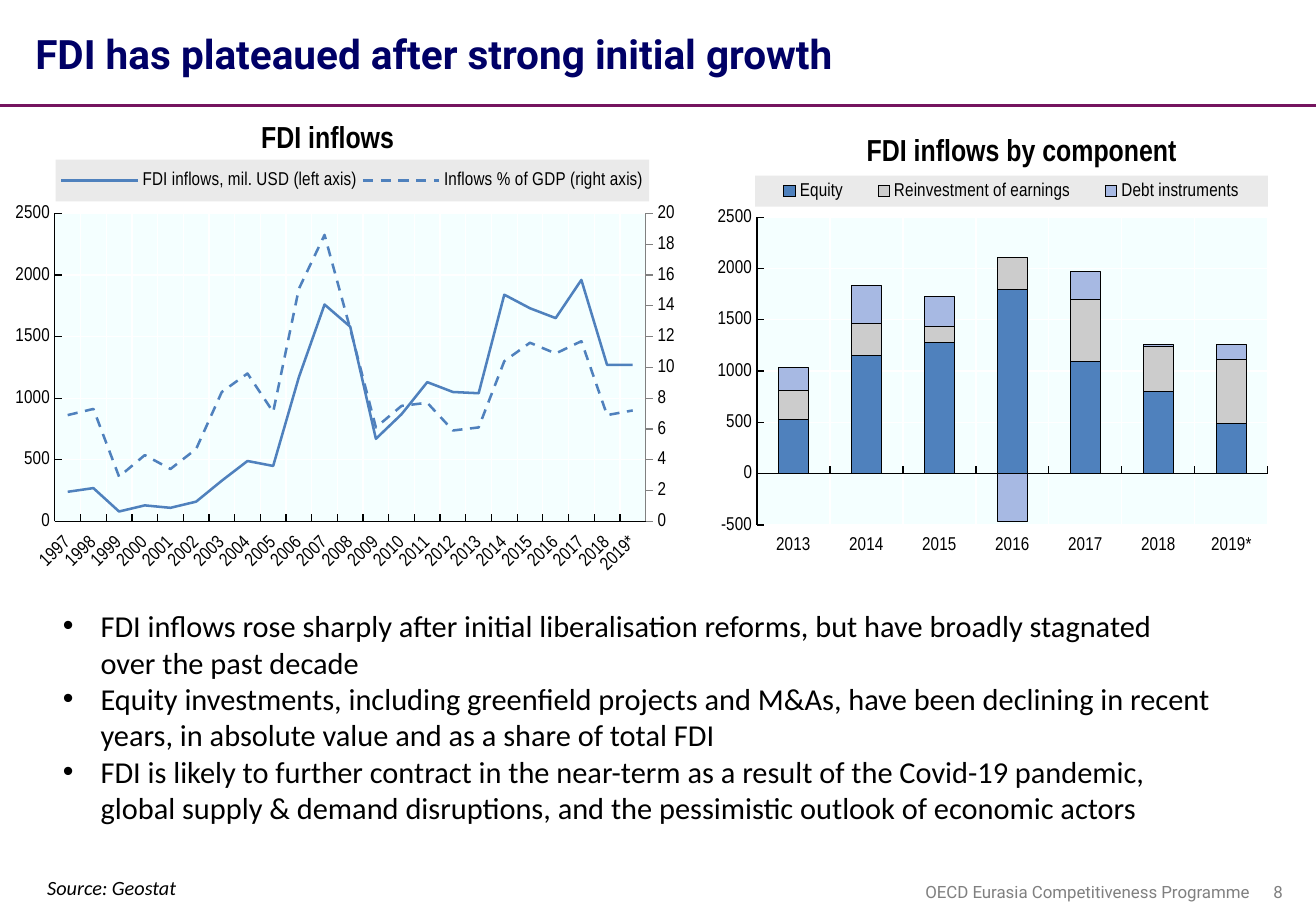
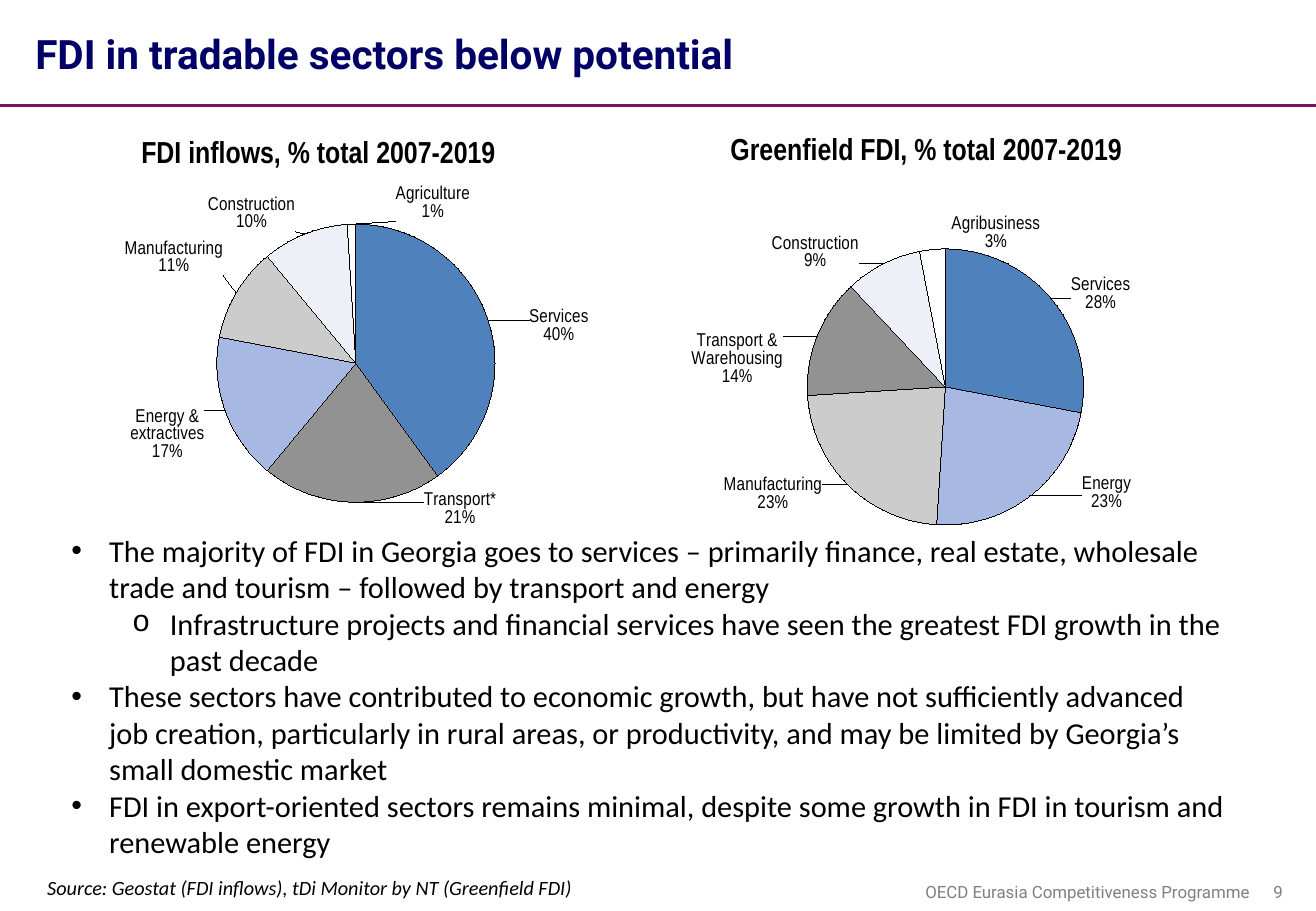
from copy import deepcopy

from pptx import Presentation
from pptx.chart.data import CategoryChartData
from pptx.dml.color import RGBColor
from pptx.enum.chart import XL_CHART_TYPE, XL_LEGEND_POSITION, XL_MARKER_STYLE, XL_TICK_LABEL_POSITION, XL_TICK_MARK
from pptx.enum.dml import MSO_LINE
from pptx.enum.shapes import MSO_CONNECTOR
from pptx.enum.text import MSO_ANCHOR, MSO_AUTO_SIZE, PP_ALIGN
from pptx.oxml import parse_xml
from pptx.oxml.ns import nsdecls, qn
from pptx.util import Inches, Pt

LINE, STACKED, PIE = XL_CHART_TYPE.LINE, XL_CHART_TYPE.COLUMN_STACKED, XL_CHART_TYPE.PIE
LEGEND_RIGHT, LEGEND_TOP = XL_LEGEND_POSITION.RIGHT, XL_LEGEND_POSITION.TOP
NO_MARKER, LABELS_LOW = XL_MARKER_STYLE.NONE, XL_TICK_LABEL_POSITION.LOW
TICK_IN, TICK_NONE = XL_TICK_MARK.INSIDE, XL_TICK_MARK.NONE
DASH, STRAIGHT = MSO_LINE.DASH, MSO_CONNECTOR.STRAIGHT
TOP, MIDDLE = MSO_ANCHOR.TOP, MSO_ANCHOR.MIDDLE
FIXED, GROW = MSO_AUTO_SIZE.NONE, MSO_AUTO_SIZE.SHAPE_TO_FIT_TEXT
LEFT, RIGHT = PP_ALIGN.LEFT, PP_ALIGN.RIGHT

BLACK, WHITE, GREY, NAVY, PURPLE = "000000", "FFFFFF", "808080", "000066", "75145F"
BLUE, LAVENDER, SILVER, STONE, MIST = "4F81BD", "A7B9E3", "CCCCCC", "929292", "EDF0F7"
PLOT_FILL, LEGEND_FILL = "F4FFFF", "EAEAEA"

TITLE_FONT = {"name": "Roboto", "size": Pt(24), "bold": True, "color": NAVY}
FOOTER_FONT = {"name": "Roboto", "size": Pt(10), "color": GREY}
BODY_FONT = {"name": "Calibri", "size": Pt(18), "color": BLACK}
SOURCE_FONT = {"name": "Calibri", "size": Pt(12), "italic": True, "color": BLACK}
CHART_FONT = {"name": "Calibri", "size": Pt(10), "color": BLACK}
LABEL_FONT = {"name": "Arial Narrow", "size": Pt(11), "bold": False, "color": BLACK}
HEADING_FONT = {"name": "Arial Narrow", "size": Pt(18), "bold": True, "color": BLACK}


def rgb(code):
    """Turn a hex string into a colour."""
    return RGBColor.from_string(code)


def style_font(font, values):
    """Set font attributes from a dict of format values."""
    for name, value in values.items():
        if name == "color":
            font.color.rgb = rgb(value)
        else:
            setattr(font, name, value)


def style_line(line, code, width):
    """Set the colour and point width of a line."""
    line.color.rgb = rgb(code)
    line.width = Pt(width)


def style_fill(fill, code):
    """Give a solid fill."""
    fill.solid()
    fill.fore_color.rgb = rgb(code)


def add_text(page, box, text, values, align=LEFT, anchor=MIDDLE, size=FIXED):
    """Add a one-paragraph text box."""
    frame = page.shapes.add_textbox(*map(Inches, box)).text_frame
    frame.word_wrap, frame.auto_size, frame.vertical_anchor = True, size, anchor
    para = frame.paragraphs[0]
    para.alignment = align
    span = para.add_run()
    span.text = text
    style_font(span.font, values)


def add_bullets(page, box, items):
    """Add a bulleted list of (level, text) items."""
    frame = page.shapes.add_textbox(*map(Inches, box)).text_frame
    frame.word_wrap, frame.auto_size = True, GROW
    for index, (level, text) in enumerate(items):
        para = frame.paragraphs[0] if index == 0 else frame.add_paragraph()
        para.level = level
        span = para.add_run()
        span.text = text
        style_font(span.font, BODY_FONT)
        typeface, mark = (("Arial", "•"), ("Courier New", "o"))[level]
        properties = para._p.get_or_add_pPr()
        properties.set("marL", str(Inches(0.31 + 0.5 * level)))
        properties.set("indent", str(-Inches(0.31)))
        properties.append(parse_xml(f'<a:buFont {nsdecls("a")} typeface="{typeface}"/>'))
        properties.append(parse_xml(f'<a:buChar {nsdecls("a")} char="{mark}"/>'))


def add_page(deck, title, number, source, source_width):
    """Add a slide with its title, rule, source and footer."""
    page = deck.slides.add_slide(deck.slide_layouts[5])
    heading = page.shapes.title
    placement = zip(("left", "top", "width", "height"), (0.29, 0.24, 10.13, 0.4))
    for name, value in placement:
        setattr(heading, name, Inches(value))
    frame = heading.text_frame
    frame.text = title
    frame_format = {"margin_left": 0, "margin_right": 0, "margin_top": 0, "margin_bottom": 0,
                    "vertical_anchor": MIDDLE, "auto_size": FIXED, "word_wrap": True}
    for name, value in frame_format.items():
        setattr(frame, name, value)
    frame.paragraphs[0].alignment = LEFT
    style_font(frame.paragraphs[0].runs[0].font, TITLE_FONT)
    rule = page.shapes.add_connector(STRAIGHT, 0, Inches(0.87), deck.slide_width, Inches(0.87))
    style_line(rule.line, PURPLE, 2)
    rule._element.spPr.append(parse_xml(f'<a:effectLst {nsdecls("a")}/>'))
    add_text(page, (0.29, 7.16, source_width, 0.3), source, SOURCE_FONT, anchor=TOP, size=GROW)
    add_text(page, (7.1, 7.22, 3.28, 0.24), "OECD Eurasia Competitiveness Programme", FOOTER_FONT, RIGHT)
    add_text(page, (10.38, 7.22, 0.41, 0.24), str(number), FOOTER_FONT)
    return page


def layout_xml(sizes, mode="edge", inner=False):
    """Write a manual chart layout from x, y and optional width and height."""
    parts = ['<c:layoutTarget val="inner"/>'] if inner else []
    if mode == "edge":
        parts += ['<c:xMode val="edge"/>', '<c:yMode val="edge"/>']
    parts += [f'<c:{name} val="{value}"/>' for name, value in zip("xywh", sizes)]
    return f'<c:layout {nsdecls("c")}><c:manualLayout>{"".join(parts)}</c:manualLayout></c:layout>'


def place(element, index, sizes, inner=False):
    """Replace the layout of a chart part."""
    for old in element.findall(qn("c:layout")):
        element.remove(old)
    element.insert(index, parse_xml(layout_xml(sizes, inner=inner)))


def fill_xml(code):
    """Build a solid fill for a chart part."""
    return parse_xml(f'<c:spPr {nsdecls("c", "a")}><a:solidFill><a:srgbClr val="{code}"/></a:solidFill></c:spPr>')


def add_chart(page, kind, box, title, title_at, plot, categories, series):
    """Add a chart with a placed title and plot area."""
    data = CategoryChartData()
    data.categories = categories
    for name, values in series:
        data.add_series(name, values)
    chart = page.shapes.add_chart(kind, *map(Inches, box), data).chart
    style_font(chart.font, CHART_FONT)
    chart.has_legend = False
    chart.has_title = True
    frame = chart.chart_title.text_frame
    frame.text = title
    style_font(frame.paragraphs[0].runs[0].font, HEADING_FONT)
    place(chart.element.xpath("c:chart/c:title")[0], 1, title_at)
    place(chart.element.xpath("c:chart/c:plotArea")[0], 0, plot, inner=True)
    return chart


def style_axes(chart, low, high, step):
    """Format the category and value axes."""
    for axis in (chart.category_axis, chart.value_axis):
        axis.major_tick_mark, axis.minor_tick_mark = TICK_IN, TICK_NONE
        axis.has_major_gridlines = True
        style_line(axis.major_gridlines.format.line, WHITE, 0.75)
        style_line(axis.format.line, BLACK, 0.75)
        style_font(axis.tick_labels.font, LABEL_FONT)
    chart.category_axis.tick_label_position = LABELS_LOW
    scale = chart.value_axis
    scale.minimum_scale, scale.maximum_scale, scale.major_unit = low, high, step
    scale.tick_labels.number_format = "General"
    scale.tick_labels.number_format_is_linked = False


def add_legend(chart, position, sizes):
    """Add a grey legend bar."""
    chart.has_legend = True
    chart.legend.position = position
    chart.legend.include_in_layout = True
    style_font(chart.legend.font, LABEL_FONT)
    legend = chart.element.xpath("c:chart/c:legend")[0]
    place(legend, 1, sizes)
    legend.find(qn("c:txPr")).addprevious(fill_xml(LEGEND_FILL))


def add_right_axis(chart, high, step):
    """Move the last line series to a second value axis."""
    plot_area = chart.element.xpath("c:chart/c:plotArea")[0]
    left = plot_area.find(qn("c:lineChart"))
    right = deepcopy(left)
    left.remove(left.findall(qn("c:ser"))[-1])
    right.remove(right.find(qn("c:ser")))
    left.addnext(right)
    category, value = (deepcopy(plot_area.find(qn(tag))) for tag in ("c:catAx", "c:valAx"))
    plot_area.findall(qn("c:valAx"))[-1].addnext(category)
    category.addnext(value)
    ids = {old.get("val"): new for old, new in zip(right.findall(qn("c:axId")), ("50010", "50020"))}
    for part in (right, category, value):
        for node in part.xpath("c:axId | c:crossAx"):
            node.set("val", ids[node.get("val")])
    for axis in (category, value):
        axis.remove(axis.find(qn("c:majorGridlines")))
    category.find(qn("c:delete")).set("val", "1")
    settings = {"c:axPos": "r", "c:crosses": "max", "c:majorTickMark": "out",
                "c:scaling/c:max": str(high), "c:majorUnit": str(step)}
    for query, setting in settings.items():
        value.xpath(query)[0].set("val", setting)
    value.find(qn("c:numFmt")).set("formatCode", "0")
    value.xpath("c:spPr/a:ln/a:solidFill/a:srgbClr")[0].set("val", GREY)


def add_inflow_chart(page, box):
    """Add the line chart of inflows with a second axis."""
    years = [str(year) for year in range(1997, 2019)] + ["2019*"]
    chart = add_chart(page, LINE, box, "FDI inflows", (0.36, 0), (0.069, 0.206, 0.856, 0.664), years, [
        ("FDI inflows, mil. USD (left axis)",
         (240, 270, 80, 130, 110, 160, 330, 490, 450, 1170, 1760, 1580,
          670, 870, 1130, 1050, 1040, 1840, 1730, 1650, 1960, 1270, 1270)),
        ("Inflows % of GDP (right axis)",
         (6.9, 7.3, 2.9, 4.3, 3.4, 4.7, 8.4, 9.6, 7.1, 15.1, 18.6, 12.5,
          6.1, 7.5, 7.7, 5.9, 6.1, 10.4, 11.6, 10.9, 11.7, 6.9, 7.2))])
    style_axes(chart, 0, 2500, 500)
    for series in chart.plots[0].series:
        series.smooth = False
        series.marker.style = NO_MARKER
        style_line(series.format.line, BLUE, 1.5)
    series.format.line.dash_style = DASH
    chart.element.xpath("//c:catAx/c:txPr/a:bodyPr")[0].set("rot", "-2700000")
    if not chart.element.xpath("//c:crossBetween"):
        between = parse_xml(f'<c:crossBetween {nsdecls("c")} val="between"/>')
        chart.element.xpath("//c:valAx/c:crosses")[0].addnext(between)
    add_right_axis(chart, 20, 2)
    chart.element.xpath("c:chart/c:plotArea")[0].append(fill_xml(PLOT_FILL))
    add_legend(chart, LEGEND_RIGHT, (0.07, 0.09, 0.86, 0.09))


def add_component_chart(page, box):
    """Add the stacked columns of inflows by component."""
    years = [str(year) for year in range(2013, 2019)] + ["2019*"]
    chart = add_chart(page, STACKED, box, "FDI inflows by component", (0.28, 0.03),
                      (0.103, 0.224, 0.867, 0.692), years, [
                          ("Equity", (530, 1150, 1280, 1800, 1090, 800, 490)),
                          ("Reinvestment of earnings", (280, 320, 160, 310, 610, 440, 620)),
                          ("Debt instruments", (230, 370, 290, -470, 270, 20, 150))])
    style_axes(chart, -500, 2500, 500)
    plot = chart.plots[0]
    plot.gap_width, plot.overlap, plot.vary_by_categories = 150, 100, False
    for series, code in zip(plot.series, (BLUE, SILVER, LAVENDER)):
        series.invert_if_negative = False
        style_fill(series.format.fill, code)
        style_line(series.format.line, BLACK, 0.5)
    chart.element.xpath("c:chart/c:plotArea")[0].append(fill_xml(PLOT_FILL))
    add_legend(chart, LEGEND_TOP, (0.1, 0.13, 0.87, 0.07))


def add_pie(page, box, title, title_at, plot, slices):
    """Add a pie from (name, share, colour, label shift) slices."""
    names, shares, codes, shifts = zip(*slices)
    chart = add_chart(page, PIE, box, title, title_at, plot, names, [("Series 1", shares)])
    pie = chart.plots[0]
    pie.vary_by_categories = True
    series = pie.series[0]
    for index, code in enumerate(codes):
        point = series.points[index]
        style_fill(point.format.fill, code)
        style_line(point.format.line, BLACK, 0)
    style_font(series.data_labels.font, LABEL_FONT)
    labels = chart.element.xpath("//c:ser/c:dLbls")[0]
    font = deepcopy(labels.find(qn("c:txPr")))
    shown = {"dLblPos": "outEnd", "showLegendKey": 0, "showVal": 0, "showCatName": 1,
             "showSerName": 0, "showPercent": 1, "showBubbleSize": 0}
    flags = "".join(f'<c:{name} val="{value}"/>' for name, value in shown.items())
    body = f'<c:numFmt formatCode="0%" sourceLinked="0"/>{flags}<c:separator>\n</c:separator>'
    entries = "".join(f'<c:dLbl><c:idx val="{index}"/>{layout_xml(shift, "factor")}{body}</c:dLbl>'
                      for index, shift in enumerate(shifts))
    fresh = parse_xml(f'<c:dLbls {nsdecls("c", "a")}>{entries}{body}<c:showLeaderLines val="1"/></c:dLbls>')
    for number_format in fresh.xpath(".//c:numFmt"):
        number_format.addnext(deepcopy(font))
    labels.getparent().replace(labels, fresh)


def build_growth(deck):
    """Build the slide on inflow growth."""
    page = add_page(deck, "FDI has plateaued after strong initial growth", 8, "Source: Geostat", 3.65)
    add_inflow_chart(page, (0.06, 0.97, 5.68, 3.82))
    add_component_chart(page, (5.73, 0.97, 4.85, 3.66))
    add_bullets(page, (0.42, 4.95, 9.66, 1.92), [
        (0, "FDI inflows rose sharply after initial liberalisation reforms, but have broadly stagnated over the past decade"),
        (0, "Equity investments, including greenfield projects and M&As, have been declining in recent years, in absolute value and as a share of total FDI"),
        (0, "FDI is likely to further contract in the near-term as a result of the Covid-19 pandemic, global supply & demand disruptions, and the pessimistic outlook of economic actors")])


def build_sectors(deck):
    """Build the slide on sector shares."""
    page = add_page(deck, "FDI in tradable sectors below potential", 9,
                    "Source: Geostat (FDI inflows), tDi Monitor by NT (Greenfield FDI)", 5.5)
    add_bullets(page, (0.49, 4.33, 9.74, 2.83), [
        (0, "The majority of FDI in Georgia goes to services – primarily finance, real estate, wholesale trade and tourism – followed by transport and energy"),
        (1, "Infrastructure projects and financial services have seen the greatest FDI growth in the past decade"),
        (0, "These sectors have contributed to economic growth, but have not sufficiently advanced job creation, particularly in rural areas, or productivity, and may be limited by Georgia’s small domestic market"),
        (0, "FDI in export-oriented sectors remains minimal, despite some growth in FDI in tourism and renewable energy")])
    add_pie(page, (4.79, 1.07, 5.6, 3.59), "Greenfield FDI, % total 2007-2019", (0.21, 0),
            (0.331, 0.273, 0.406, 0.633), [
                ("Services", 28, BLUE, (0.02, 0.04)), ("Energy", 23, LAVENDER, (0.07, -0.06)),
                ("Manufacturing", 23, SILVER, (-0.03, -0.03)),
                ("Transport & Warehousing", 14, STONE, (-0.04, 0.12)),
                ("Construction", 9, MIST, (-0.03, 0.03)), ("Agribusiness", 3, WHITE, (0.16, 0.02))])
    add_pie(page, (0.11, 1.09, 5.6, 3.6), "FDI inflows, % total 2007-2019", (0.18, 0),
            (0.299, 0.21, 0.409, 0.636), [
                ("Services", 40, BLUE, (0.05, 0.06)), ("Transport*", 21, STONE, (0.16, -0.04)),
                ("Energy & extractives", 17, LAVENDER, (-0.02, -0.01)),
                ("Manufacturing", 11, SILVER, (-0.01, -0.03)),
                ("Construction", 10, MIST, (-0.01, 0.01)), ("Agriculture", 1, WHITE, (0.12, 0.01))])


def main():
    """Build and save the deck."""
    deck = Presentation()
    deck.slide_width, deck.slide_height = Inches(10.83), Inches(7.5)
    build_growth(deck)
    build_sectors(deck)
    deck.save("out.pptx")


if __name__ == "__main__":
    main()
